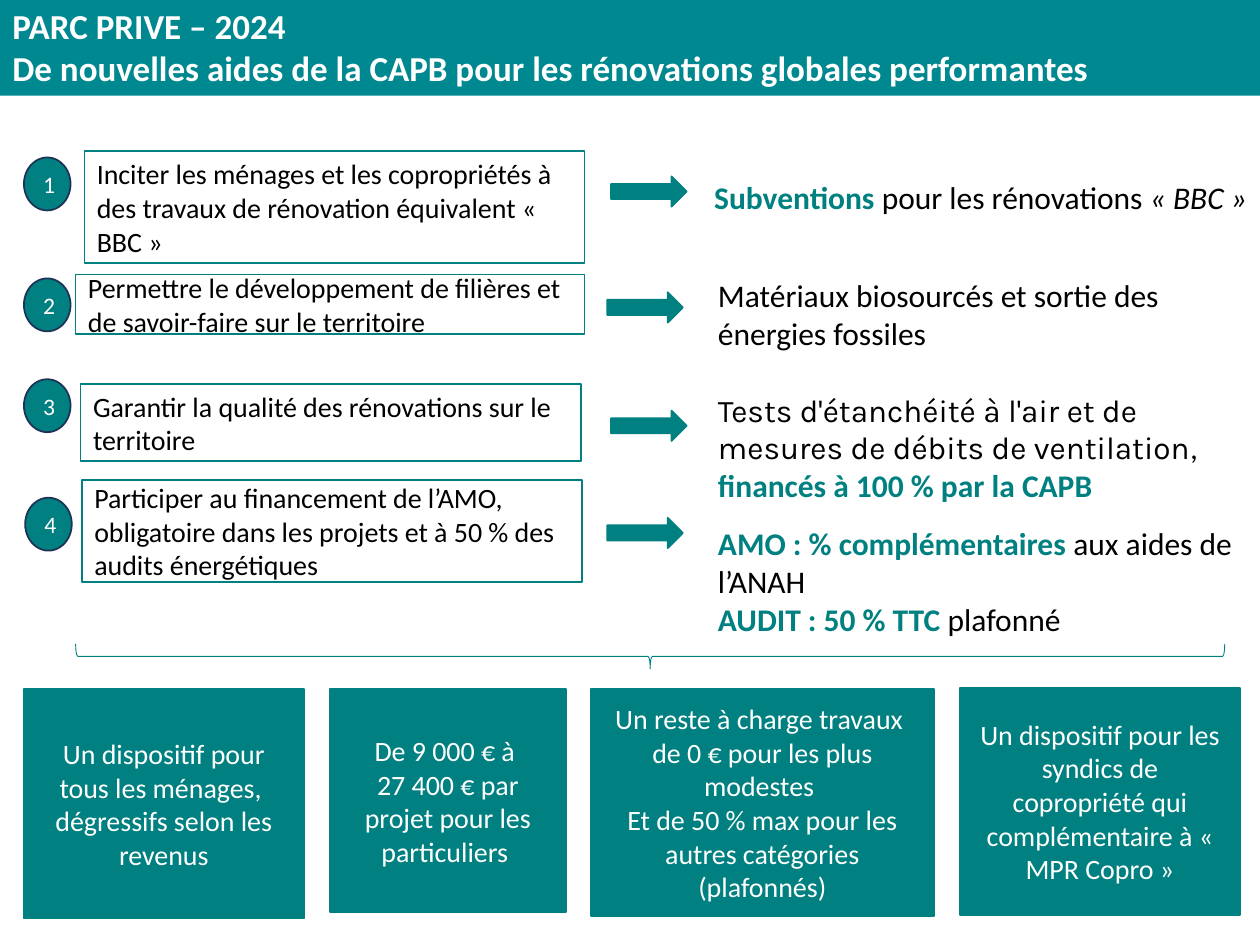
import pptx
import pptx.dml.color
import pptx.enum.shapes
import pptx.enum.text
import pptx.util

PX = 9144
TEAL, BANNER, NAVY, WHITE, BLACK = "008080", "008891", "1E3256", "FFFFFF", "000000"
SHAPE = pptx.enum.shapes.MSO_SHAPE
ALIGN = pptx.enum.text.PP_ALIGN
ANCHOR = pptx.enum.text.MSO_ANCHOR
KEY = {"color": TEAL, "bold": True}

ROWS = [
    {"top": 116, "badge": (19, 9), "goal": (67, 4, 397, 89), "arrow": (485, 24),
     "answer": (557, 0, 443, 80),
     "goal_text": "Inciter les ménages et les copropriétés à des travaux de rénovation équivalent « BBC »",
     "answer_text": [[("Subventions ", KEY), ("pour les rénovations ", {}),
                      ("« BBC »", {"italic": True})]]},
    {"top": 208, "badge": (19, 13), "goal": (60, 10, 404, 47), "arrow": (482, 24),
     "answer": (560, 0, 440, 82),
     "goal_text": "Permettre le développement de filières et de savoir-faire sur le territoire",
     "answer_text": [[("Matériaux biosourcés et sortie des énergies fossiles", {})]]},
    {"top": 301, "badge": (19, 0), "goal": (64, 4, 397, 61), "arrow": (485, 25),
     "answer": (560, 13, 440, 82),
     "goal_text": "Garantir la qualité des rénovations sur le territoire",
     "answer_text": [[("Tests d'étanchéité à l'air et de mesures de débits de ventilation",
                       {"name": "Karla"}),
                      (", ", {}), ("financés à 100 % par la CAPB", KEY)]]},
    {"top": 381, "badge": (20, 14), "goal": (65, 0, 397, 81), "arrow": (482, 30),
     "answer": (560, 39, 440, 82),
     "goal_text": "Participer au financement de l’AMO, obligatoire dans les projets et à 50 % des audits énergétiques",
     "answer_text": [[("AMO : % complémentaires ", KEY), ("aux aides de l’ANAH", {})],
                     [("AUDIT : 50 % TTC ", KEY), ("plafonné", {})]]},
]

CARDS = [
    ((0, 1, 222, 182), ["Un dispositif pour tous les ménages, ", "dégressifs selon les revenus"]),
    ((243, 1, 187, 177), ["De 9 000 € à ", "27 400 € par projet pour les particuliers "]),
    ((450, 1, 272, 180), ["Un reste à charge travaux ", "de 0 € pour les plus modestes ",
                          "Et de 50 % max pour les autres catégories (plafonnés)"]),
    ((743, 0, 222, 180),
     ["Un dispositif pour les syndics de copropriété qui complémentaire à « MPR Copro »"]),
]


def rgb(code):
    """Return the colour for a hex string."""
    return pptx.dml.color.RGBColor.from_string(code)


def add_shape(page, kind, box, fill=None, line=None, width=1):
    """Add a flat preset shape in a box given in px."""
    shape = page.shapes.add_shape(kind, *(round(value * PX) for value in box))
    shape.shadow.inherit = False
    if fill:
        shape.fill.solid()
        shape.fill.fore_color.rgb = rgb(fill)
    else:
        shape.fill.background()
    if line:
        shape.line.color.rgb = rgb(line)
        shape.line.width = pptx.util.Pt(width)
    else:
        shape.line.fill.background()
    return shape


def write(shape, paragraphs, size, color, align=ALIGN.LEFT, anchor=ANCHOR.MIDDLE, bold=False):
    """Fill a shape with paragraphs of (text, format) spans."""
    frame = shape.text_frame
    frame.word_wrap = True
    frame.vertical_anchor = anchor
    for index, spans in enumerate(paragraphs):
        para = frame.paragraphs[0] if index == 0 else frame.add_paragraph()
        para.alignment = align
        for text, changes in spans:
            span = para.add_run()
            span.text = text
            style = {"name": "Calibri", "size": pptx.util.Pt(size), "bold": bold,
                     "color": color, **changes}
            span.font.color.rgb = rgb(style.pop("color"))
            for key, value in style.items():
                setattr(span.font, key, value)


def plain(*lines):
    """Turn lines into paragraphs of one unformatted span."""
    return [[(line, {})] for line in lines]


def draw_banner(page, box):
    """Draw the title band."""
    banner = add_shape(page, SHAPE.RECTANGLE, box, BANNER)
    lines = plain("PARC PRIVE – 2024",
                  "De nouvelles aides de la CAPB pour les rénovations globales performantes")
    write(banner, lines, 20, WHITE, anchor=ANCHOR.TOP, bold=True)


def draw_row(page, left, number, row):
    """Draw a numbered goal, its arrow and the matching aid."""
    def place(x, y, width, height):
        return left + x, row["top"] + y, width, height

    answer = add_shape(page, SHAPE.RECTANGLE, place(*row["answer"]), WHITE)
    write(answer, row["answer_text"], 18, BLACK)
    goal = add_shape(page, SHAPE.RECTANGLE, place(*row["goal"]), WHITE, TEAL)
    write(goal, plain(row["goal_text"]), 16, BLACK)
    badge = add_shape(page, SHAPE.OVAL, place(*row["badge"], 37, 42), TEAL, NAVY)
    write(badge, plain(str(number)), 13.5, WHITE, ALIGN.CENTER)
    add_shape(page, SHAPE.RIGHT_ARROW, place(*row["arrow"], 60, 24), TEAL, TEAL)


def draw_brace(page, box):
    """Draw a brace that opens upwards across the box."""
    left, top, width, height = box
    shift = (width - height) / 2
    upright = (left + shift, top - shift, height, width)
    add_shape(page, SHAPE.RIGHT_BRACE, upright, line=TEAL, width=0.5).rotation = 90


def draw_cards(page, left, top):
    """Draw the row of result cards."""
    for (x, y, width, height), lines in CARDS:
        card = add_shape(page, SHAPE.RECTANGLE, (left + x, top + y, width, height), TEAL, TEAL)
        write(card, plain(*lines), 16, WHITE, ALIGN.CENTER)


def main():
    """Build the slide and save the deck."""
    deck = pptx.Presentation()
    deck.slide_width, deck.slide_height = 1000 * PX, 750 * PX
    page = deck.slides.add_slide(deck.slide_layouts[6])
    for number, row in enumerate(ROWS, 1):
        draw_row(page, 0, number, row)
    draw_brace(page, (60, 511, 912, 20))
    draw_cards(page, 19, 546)
    draw_banner(page, (0, -1, 1000, 77))
    deck.save("out.pptx")


if __name__ == "__main__":
    main()
